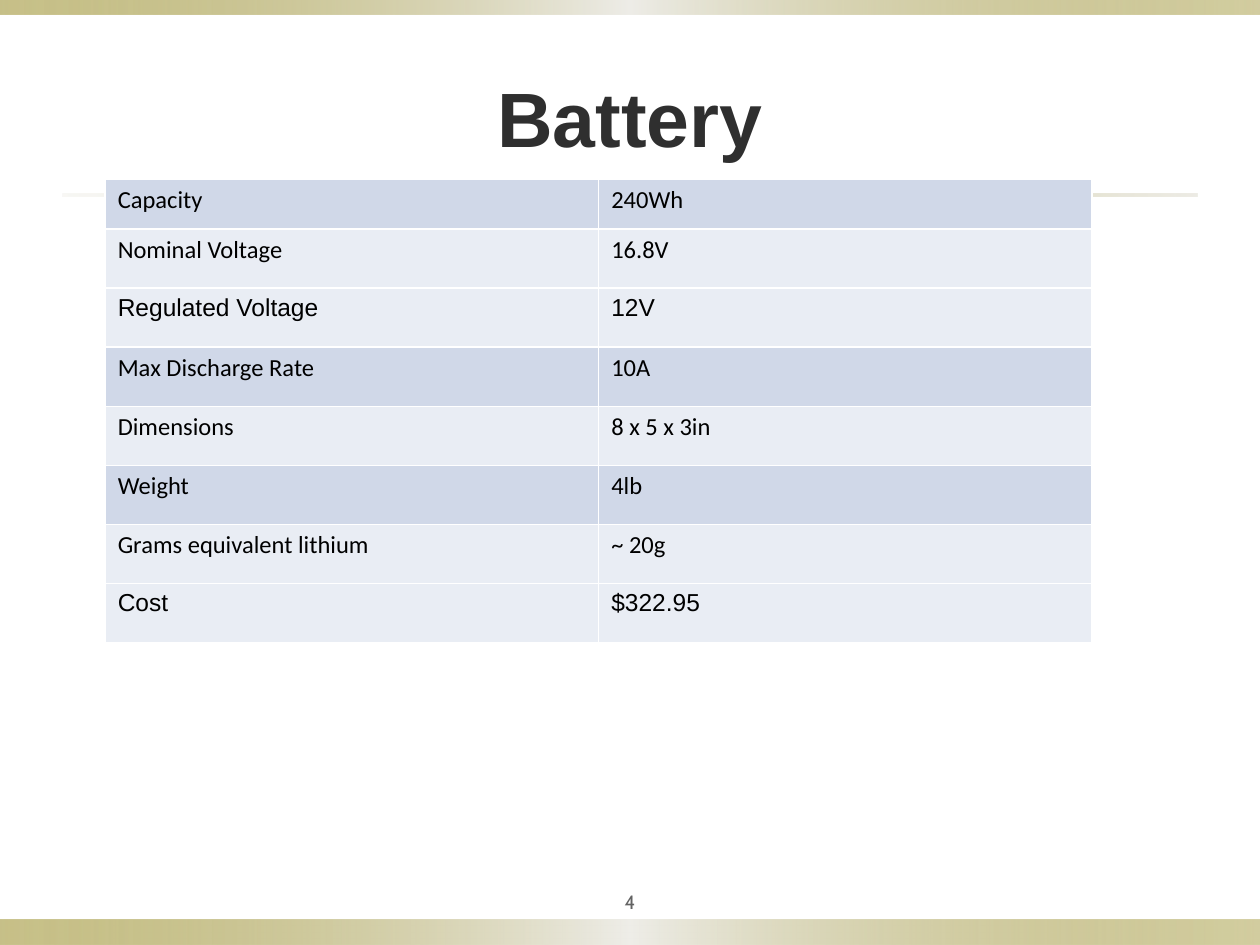
from dataclasses import dataclass

from lxml.etree import SubElement
from pptx import Presentation
from pptx.dml.color import RGBColor
from pptx.enum.shapes import MSO_SHAPE
from pptx.enum.text import MSO_ANCHOR, PP_ALIGN
from pptx.oxml.ns import qn
from pptx.util import Cm, Pt


@dataclass(frozen=True)
class Theme:
    olive: str = "918415"
    light: str = "EEEDE8"
    stone: str = "DCD9CC"
    title: str = "2F2F2F"
    body: str = "000000"
    number: str = "636363"
    border: str = "FFFFFF"
    dark_row: str = "D0D8E8"
    light_row: str = "E9EDF4"
    title_size: int = 44
    body_size: int = 14
    number_size: int = 11


def add_gradient_bar(slide, left, top, width, height, stops):
    bar = slide.shapes.add_shape(
        MSO_SHAPE.RECTANGLE, Cm(left), Cm(top), Cm(width), Cm(height)
    )
    bar.shadow.inherit = False
    bar.line.fill.background()
    bar.fill.gradient()
    bar.fill.gradient_angle = 0
    stop_list = bar.fill._fill._gradFill.find(qn("a:gsLst"))
    for old_stop in list(stop_list):
        stop_list.remove(old_stop)
    for position, color, opacity in stops:
        stop = SubElement(stop_list, qn("a:gs"), pos=str(position * 1000))
        color_element = SubElement(stop, qn("a:srgbClr"), val=color)
        SubElement(color_element, qn("a:alpha"), val=str(opacity * 1000))


def format_text(paragraph, font_name, size, color, bold=False):
    for run in paragraph.runs:
        run.font.name = font_name
        run.font.size = Pt(size)
        run.font.color.rgb = RGBColor.from_string(color)
        run.font.bold = bold


theme = Theme()
presentation = Presentation()
presentation.slide_width = Cm(25.4)
presentation.slide_height = Cm(19.05)
slide = presentation.slides.add_slide(presentation.slide_layouts[5])

band_stops = [(0, theme.olive, 50), (50, theme.light, 100), (100, theme.olive, 40)]
rule_stops = [(0, theme.stone, 20), (50, theme.olive, 40), (100, theme.stone, 50)]
add_gradient_bar(slide, 0, 18.54, 25.4, 0.51, band_stops)
add_gradient_bar(slide, 0, 0, 25.4, 0.3, band_stops)
add_gradient_bar(slide, 1.27, 3.91, 22.86, 0.05, rule_stops)

title = slide.shapes.title
title.left, title.top = Cm(1.27), Cm(0.76)
title.width, title.height = Cm(22.86), Cm(3.18)
title.text_frame.text = "Battery"
title.text_frame.vertical_anchor = MSO_ANCHOR.MIDDLE
title_paragraph = title.text_frame.paragraphs[0]
title_paragraph.alignment = PP_ALIGN.CENTER
format_text(title_paragraph, "Arial", theme.title_size, theme.title, bold=True)

specifications = [
    ("Capacity", "240Wh", "Calibri", theme.dark_row),
    ("Nominal Voltage", "16.8V", "Calibri", theme.light_row),
    ("Regulated Voltage", "12V", "Arial", theme.light_row),
    ("Max Discharge Rate", "10A", "Calibri", theme.dark_row),
    ("Dimensions", "8 x 5 x 3in", "Calibri", theme.light_row),
    ("Weight", "4lb", "Calibri", theme.dark_row),
    ("Grams equivalent lithium", "~ 20g", "Calibri", theme.light_row),
    ("Cost", "$322.95", "Arial", theme.light_row),
]
table = slide.shapes.add_table(
    len(specifications), 2, Cm(2.12), Cm(3.61), Cm(19.9), Cm(9.32)
).table
table.first_row = False
table.horz_banding = False
for column in table.columns:
    column.width = Cm(9.95)

for row_index, (label, value, font_name, row_color) in enumerate(specifications):
    table.rows[row_index].height = Cm(1.01 if row_index == 0 else 1.19)
    for column_index, text in enumerate((label, value)):
        cell = table.cell(row_index, column_index)
        cell.text_frame.text = text
        format_text(
            cell.text_frame.paragraphs[0], font_name, theme.body_size, theme.body
        )
        cell_properties = cell._tc.get_or_add_tcPr()
        for side in ("a:lnL", "a:lnR", "a:lnT", "a:lnB"):
            border = SubElement(cell_properties, qn(side), w=str(Pt(1)))
            border_fill = SubElement(border, qn("a:solidFill"))
            SubElement(border_fill, qn("a:srgbClr"), val=theme.border)
        cell.fill.solid()
        cell.fill.fore_color.rgb = RGBColor.from_string(row_color)

number_box = slide.shapes.add_textbox(Cm(11.43), Cm(17.78), Cm(2.54), Cm(0.79))
number_frame = number_box.text_frame
number_frame.word_wrap = True
number_frame.vertical_anchor = MSO_ANCHOR.MIDDLE
number_frame.margin_left = number_frame.margin_right = Cm(0.13)
number_frame.margin_top = number_frame.margin_bottom = Cm(0.13)
number_frame.text = "4"
number_paragraph = number_frame.paragraphs[0]
number_paragraph.alignment = PP_ALIGN.CENTER
format_text(number_paragraph, "Cabin", theme.number_size, theme.number)

presentation.save("out.pptx")
